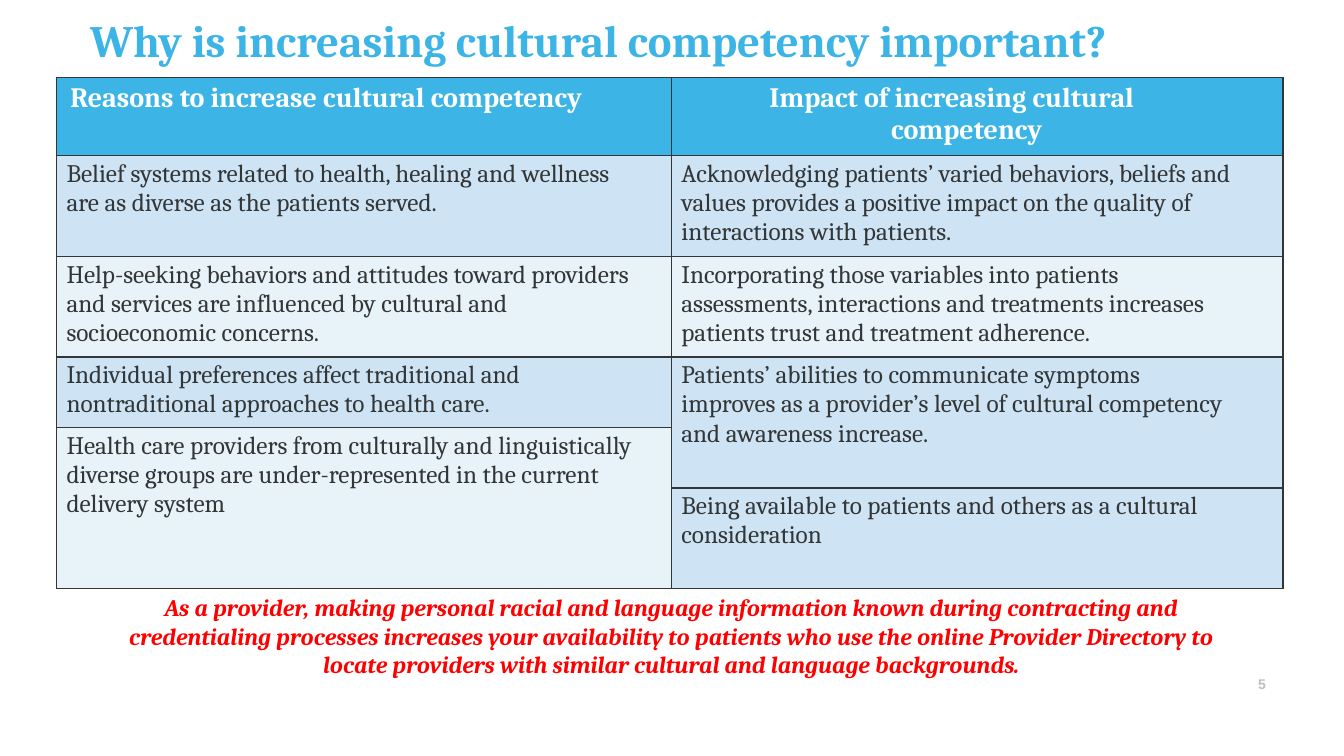
from dataclasses import dataclass

from lxml.etree import SubElement
from pptx import Presentation
from pptx.dml.color import RGBColor
from pptx.enum.text import MSO_ANCHOR as Anchor, MSO_AUTO_SIZE as AutoSize, PP_ALIGN as Align
from pptx.oxml.ns import qn
from pptx.util import Pt

COLORS = {
    "blue": "3CB5E6",
    "band": "CEE4F5",
    "pale": "E8F3F9",
    "ink": "333637",
    "white": "FFFFFF",
    "red": "FF0000",
    "gray": "BEBEBE",
}


@dataclass(frozen=True)
class Style:
    size: float
    color: str
    bold: bool = False
    italic: bool = False
    font: str = "Cambria"
    align: Align = Align.LEFT


@dataclass(frozen=True)
class Entry:
    row: int
    column: int
    fill: str
    lines: tuple[str, ...]
    row_span: int = 1


TITLE = Style(32, "blue", bold=True)
HEADER = Style(20, "white", bold=True)
BODY = Style(18, "ink")
CALLOUT = Style(17, "red", bold=True, italic=True, align=Align.CENTER)
PAGE_NUMBER = Style(10, "gray", bold=True, font="Arial")

COLUMN_WIDTHS = (439.2, 437)
ROW_HEIGHTS = (55.4, 72, 72, 50.4, 43.2, 72)
RIGHT_MARGINS = (22, 31)
HEADER_INDENTS = ((10, 0), (157, -87))

ENTRIES = (
    Entry(0, 0, "blue", ("Reasons to increase cultural competency",)),
    Entry(0, 1, "blue", ("Impact of increasing cultural competency",)),
    Entry(1, 0, "band", ("Belief systems related to health, healing and wellness",
                         "are as diverse as the patients served.")),
    Entry(1, 1, "band", ("Acknowledging patients’ varied behaviors, beliefs and values provides "
                         "a positive impact on the quality of interactions with patients.",)),
    Entry(2, 0, "pale", ("Help-seeking behaviors and attitudes toward providers and services "
                         "are influenced by cultural and socioeconomic concerns.",)),
    Entry(2, 1, "pale", ("Incorporating those variables into patients assessments, interactions "
                         "and treatments increases patients trust and treatment adherence.",)),
    Entry(3, 0, "band", ("Individual preferences affect traditional and nontraditional "
                         "approaches to health care.",)),
    Entry(3, 1, "band", ("Patients’ abilities to communicate symptoms",
                         "improves as a provider’s level of cultural competency",
                         "and awareness increase."), row_span=2),
    Entry(4, 0, "pale", ("Health care providers from culturally and linguistically diverse groups "
                         "are under-represented in the current delivery system",), row_span=2),
    Entry(5, 1, "band", ("Being available to patients and others as a cultural consideration",)),
)


def rgb(name: str) -> RGBColor:
    return RGBColor.from_string(COLORS[name])


def write(frame, text: str, style: Style) -> None:
    frame.text = text
    for para in frame.paragraphs:
        para.alignment = style.align
        for span in para.runs:
            font = span.font
            font.name, font.size = style.font, Pt(style.size)
            font.bold, font.italic = style.bold, style.italic
            font.color.rgb = rgb(style.color)


def fill_box(box, place: tuple, text: str, style: Style, side: float = 0, top: float = 0) -> None:
    box.left, box.top, box.width, box.height = map(Pt, place)
    frame = box.text_frame
    frame.word_wrap = True
    frame.auto_size = AutoSize.NONE
    frame.vertical_anchor = Anchor.TOP
    frame.margin_left = frame.margin_right = Pt(side)
    frame.margin_top, frame.margin_bottom = Pt(top), 0
    write(frame, text, style)


def paint_cell(cell, fill: str) -> None:
    properties = cell._tc.get_or_add_tcPr()
    for side in ("lnL", "lnR", "lnT", "lnB"):
        line = SubElement(properties, qn(f"a:{side}"), w=str(Pt(1)))
        solid = SubElement(line, qn("a:solidFill"))
        SubElement(solid, qn("a:srgbClr"), val=COLORS["ink"])
    cell.fill.solid()
    cell.fill.fore_color.rgb = rgb(fill)


def draw_entry(table, entry: Entry) -> None:
    is_header = entry.row == 0
    last_row = entry.row + entry.row_span - 1
    cell = table.cell(entry.row, entry.column)
    for row in range(entry.row, last_row + 1):
        paint_cell(table.cell(row, entry.column), entry.fill)
    if entry.row_span > 1:
        cell.merge(table.cell(last_row, entry.column))
    cell.margin_left = 0 if is_header else Pt(7.2)
    cell.margin_right = Pt(RIGHT_MARGINS[entry.column])
    cell.margin_top, cell.margin_bottom = Pt(3), 0
    cell.vertical_anchor = Anchor.TOP
    write(cell.text_frame, "\n".join(entry.lines), HEADER if is_header else BODY)
    if is_header:
        left, hanging = HEADER_INDENTS[entry.column]
        properties = cell.text_frame.paragraphs[0]._p.get_or_add_pPr()
        properties.set("marL", str(Pt(left)))
        properties.set("indent", str(Pt(hanging)))


def main() -> None:
    deck = Presentation()
    deck.slide_width, deck.slide_height = Pt(960), Pt(540)
    page = deck.slides.add_slide(deck.slide_layouts[5])

    # Title
    fill_box(page.shapes.title, (63.4, 8, 833, 40.3),
             "Why is increasing cultural competency important?", TITLE, side=1, top=1)

    # Table of reasons and impacts
    table = page.shapes.add_table(len(ROW_HEIGHTS), len(COLUMN_WIDTHS), Pt(40.3), Pt(55.6),
                                  Pt(sum(COLUMN_WIDTHS)), Pt(sum(ROW_HEIGHTS))).table
    for column, width in zip(table.columns, COLUMN_WIDTHS):
        column.width = Pt(width)
    for row, height in zip(table.rows, ROW_HEIGHTS):
        row.height = Pt(height)
    for entry in ENTRIES:
        draw_entry(table, entry)

    # Callout and page number
    callout = page.shapes.add_textbox(0, 0, 0, 0)
    fill_box(callout, (70.6, 422.6, 818, 63.4),
             "As a provider, making personal racial and language information known during "
             "contracting and credentialing processes increases your availability to patients "
             "who use the online Provider Directory to locate providers with similar cultural "
             "and language backgrounds.", CALLOUT, side=10, top=1)
    number = page.shapes.add_textbox(0, 0, 0, 0)
    fill_box(number, (895.7, 482.4, 18, 13), "5", PAGE_NUMBER, side=3)

    deck.save("out.pptx")


if __name__ == "__main__":
    main()
